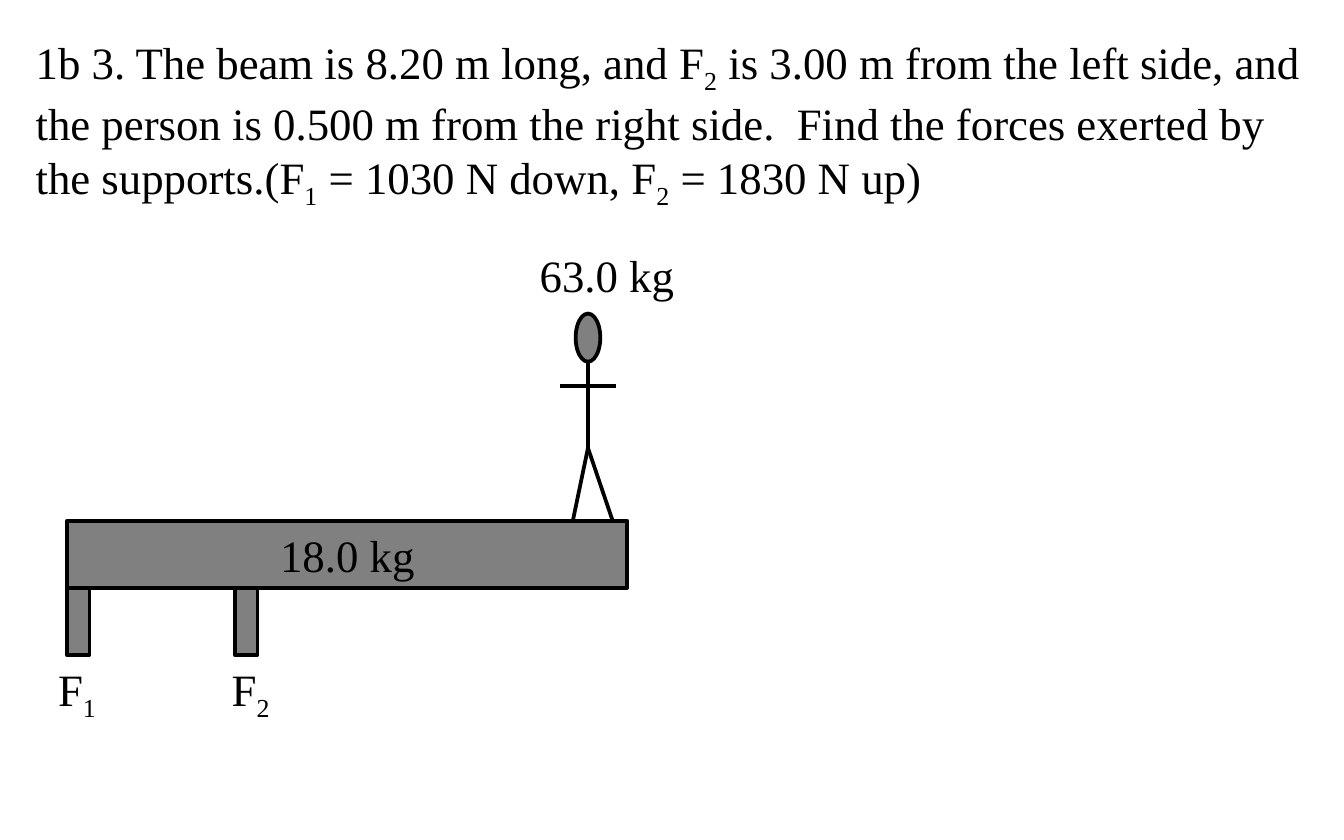
from lxml import etree
from pptx import Presentation
from pptx import util as u
from pptx.dml.color import RGBColor
from pptx.enum import shapes, text
from pptx.oxml import ns

BLACK = RGBColor(0x00, 0x00, 0x00)
GRAY = RGBColor(0x80, 0x80, 0x80)
FONT, SIZE, LINE = "Times New Roman", u.Pt(24), u.Pt(2)

# Drawing grid: 240 columns by 150 rows on the slide
CELL = u.Inches(1) / 24
BEAM_LEFT, BEAM_TOP, BEAM_WIDTH, BEAM_HEIGHT = 12, 93, 100, 12
POST_TOP = BEAM_TOP + BEAM_HEIGHT
POST_WIDTH, POST_HEIGHT = 4, 12
PERSON_X, HIP_Y = 105, 80

PROBLEM = ("1b 3. The beam is 8.20 m long, and F_2 is 3.00 m from the left side, "
           "and the person is 0.500 m from the right side.  Find the forces exerted "
           "by the supports.(F_1 = 1030 N down, F_2 = 1830 N up)")


def grid(*cells):
    return [u.Emu(round(c * CELL)) for c in cells]


def add_run(p, words, subscript=False):
    r = p.add_run()
    r.text = words
    r.font.name, r.font.size = FONT, SIZE
    r.font.color.rgb = BLACK
    if subscript:
        r._r.get_or_add_rPr().set("baseline", "-25000")


def write(p, words):
    """Write words; the character after each underscore is a subscript."""
    first, *rest = words.split("_")
    add_run(p, first)
    for part in rest:
        add_run(p, part[0], subscript=True)
        if part[1:]:
            add_run(p, part[1:])


def add_label(parent, words, left, top, width, height=12, wrap=False):
    sp = parent.add_textbox(*grid(left, top, width, height))
    tf = sp.text_frame
    tf.word_wrap = wrap
    tf.auto_size = text.MSO_AUTO_SIZE.SHAPE_TO_FIT_TEXT
    write(tf.paragraphs[0], words)


def add_solid(parent, kind, left, top, width, height):
    sp = parent.add_shape(kind, *grid(left, top, width, height))
    sp.shadow.inherit = False
    sp.fill.solid()
    sp.fill.fore_color.rgb = GRAY
    sp.line.color.rgb = BLACK
    sp.line.width = LINE
    return sp


def add_line(parent, x1, y1, x2, y2):
    line = parent.add_connector(shapes.MSO_CONNECTOR.STRAIGHT, *grid(x1, y1, x2, y2))
    line.line.color.rgb = BLACK
    line.line.width = LINE
    etree.SubElement(line._element.spPr, ns.qn("a:effectLst"))


def add_beam(parent):
    sp = add_solid(parent, shapes.MSO_SHAPE.RECTANGLE,
                   BEAM_LEFT, BEAM_TOP, BEAM_WIDTH, BEAM_HEIGHT)
    tf = sp.text_frame
    tf.vertical_anchor = text.MSO_ANCHOR.MIDDLE
    p = tf.paragraphs[0]
    p.alignment = text.PP_ALIGN.CENTER
    write(p, "18.0 kg")


def add_person(parent):
    for foot_x in (102.3, 109.4):
        add_line(parent, foot_x, BEAM_TOP, PERSON_X, HIP_Y)
    add_line(parent, PERSON_X, HIP_Y + 0.5, PERSON_X, 64.5)
    add_solid(parent, shapes.MSO_SHAPE.OVAL, PERSON_X - 2.2, 56, 4.4, 8.6)
    add_line(parent, PERSON_X - 5, 69, PERSON_X + 5, 69)
    add_label(parent, "63.0 kg", 94, 43, 29)


def add_support(parent, name, left, label_left):
    add_solid(parent, shapes.MSO_SHAPE.RECTANGLE, left, POST_TOP, POST_WIDTH, POST_HEIGHT)
    add_label(parent, name, label_left, POST_TOP + POST_HEIGHT, 12.5)


def main():
    prs = Presentation()
    prs.slide_width, prs.slide_height = grid(240, 150)
    s = prs.slides.add_slide(prs.slide_layouts[6])

    # Problem statement
    add_label(s.shapes, PROBLEM, 4, 5, 232, 31.5, wrap=True)

    # Beam diagram
    diagram = s.shapes.add_group_shape().shapes
    add_beam(diagram)
    add_person(diagram)
    add_support(diagram, "F_1", BEAM_LEFT, 8)
    add_support(diagram, "F_2", BEAM_LEFT + 30, 39)

    prs.save("out.pptx")


if __name__ == "__main__":
    main()
